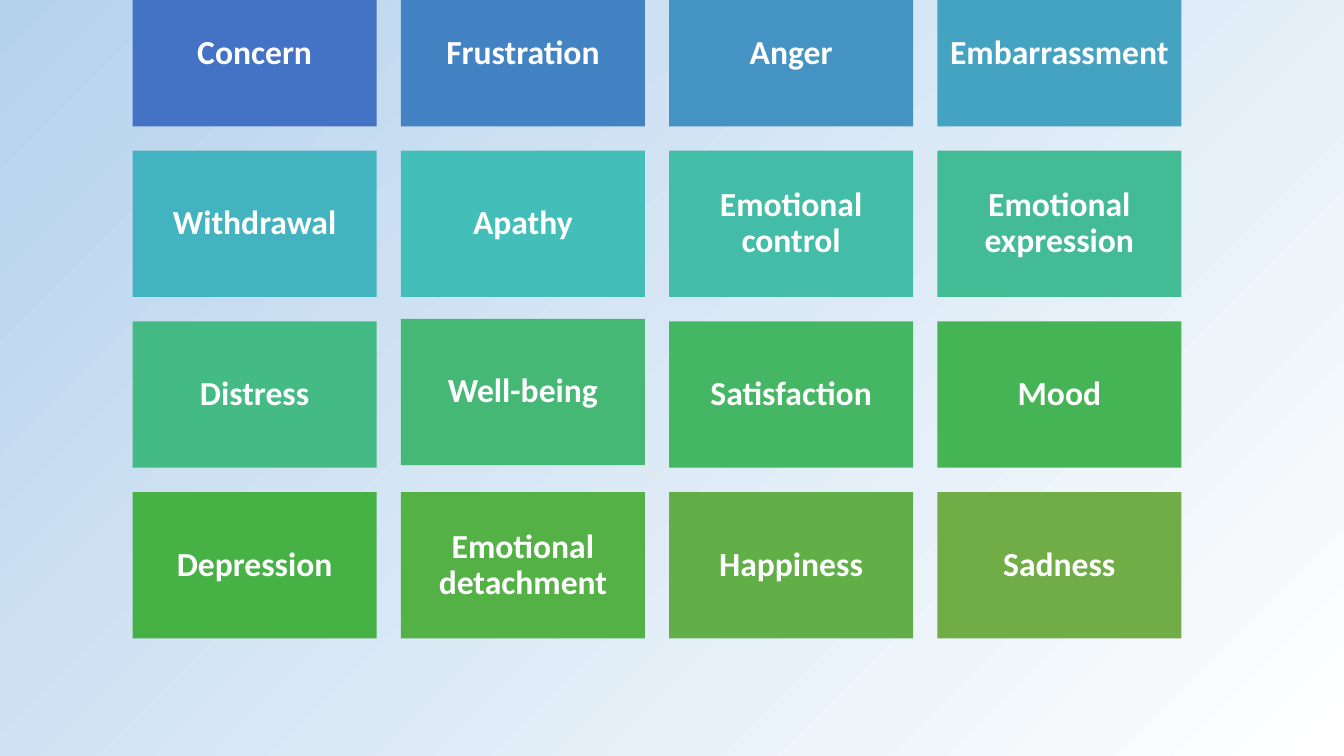
import pptx
import pptx.util
import pptx.dml.color
import pptx.enum.shapes
import pptx.enum.text

Pt = pptx.util.Pt

HUES = {
    "text": "FFFFFF",
    "pale": "FFFFFF",
    "sky": "B5D2EC",
    "Concern": "4472C4",
    "Frustration": "4483C3",
    "Anger": "4493C2",
    "Embarrassment": "44A3C0",
    "Withdrawal": "43B3BF",
    "Apathy": "43BEB9",
    "Emotional control": "43BDA7",
    "Emotional expression": "43BC96",
    "Distress": "44BA85",
    "Well-being": "44B874",
    "Satisfaction": "45B664",
    "Mood": "45B455",
    "Depression": "46B246",
    "Emotional detachment": "54B146",
    "Happiness": "62AF47",
    "Sadness": "70AD47",
}
MOODS = [
    ["Concern", "Frustration", "Anger", "Embarrassment"],
    ["Withdrawal", "Apathy", "Emotional control", "Emotional expression"],
    ["Distress", "Well-being", "Satisfaction", "Mood"],
    ["Depression", "Emotional detachment", "Happiness", "Sadness"],
]
SHIFT = {"Well-being": -1.8}


def hue(name):
    return pptx.dml.color.RGBColor.from_string(HUES[name])


def paint_back(slide):
    fill = slide.background.fill
    fill.gradient()
    fill.gradient_angle = 135
    for stop, name in zip(fill.gradient_stops, ("pale", "sky")):
        stop.color.rgb = hue(name)


def add_tile(slide, label, left, top, width, height):
    tile = slide.shapes.add_shape(
        pptx.enum.shapes.MSO_SHAPE.RECTANGLE,
        Pt(left), Pt(top), Pt(width), Pt(height))
    tile.shadow.inherit = False
    tile.fill.solid()
    tile.fill.fore_color.rgb = hue(label)
    tile.line.fill.background()
    frame = tile.text_frame
    frame.word_wrap = True
    frame.vertical_anchor = pptx.enum.text.MSO_ANCHOR.MIDDLE
    frame.margin_left = frame.margin_right = Pt(7.2)
    frame.margin_top = frame.margin_bottom = Pt(7.2)
    para = frame.paragraphs[0]
    para.alignment = pptx.enum.text.PP_ALIGN.CENTER
    para.line_spacing = 0.9
    run = para.add_run()
    run.text = label
    run.font.name = "Calibri"
    run.font.size = Pt(24)
    run.font.bold = True
    run.font.color.rgb = hue("text")


def add_grid(slide, rows, left, top, width):
    count = len(rows[0])
    wide = width / (count + 0.1 * (count - 1))
    high = 0.6 * wide
    gap = 0.1 * wide
    for row, labels in enumerate(rows):
        for col, label in enumerate(labels):
            add_tile(slide, label,
                     left + col * (wide + gap),
                     top + row * (high + gap) + SHIFT.get(label, 0),
                     wide, high)


def main():
    deck = pptx.Presentation()
    deck.slide_width = Pt(960)
    deck.slide_height = Pt(540)
    slide = deck.slides.add_slide(deck.slide_layouts[6])
    paint_back(slide)
    add_grid(slide, MOODS, 94.8, -14.3, 749)
    deck.save("out.pptx")


if __name__ == "__main__":
    main()
